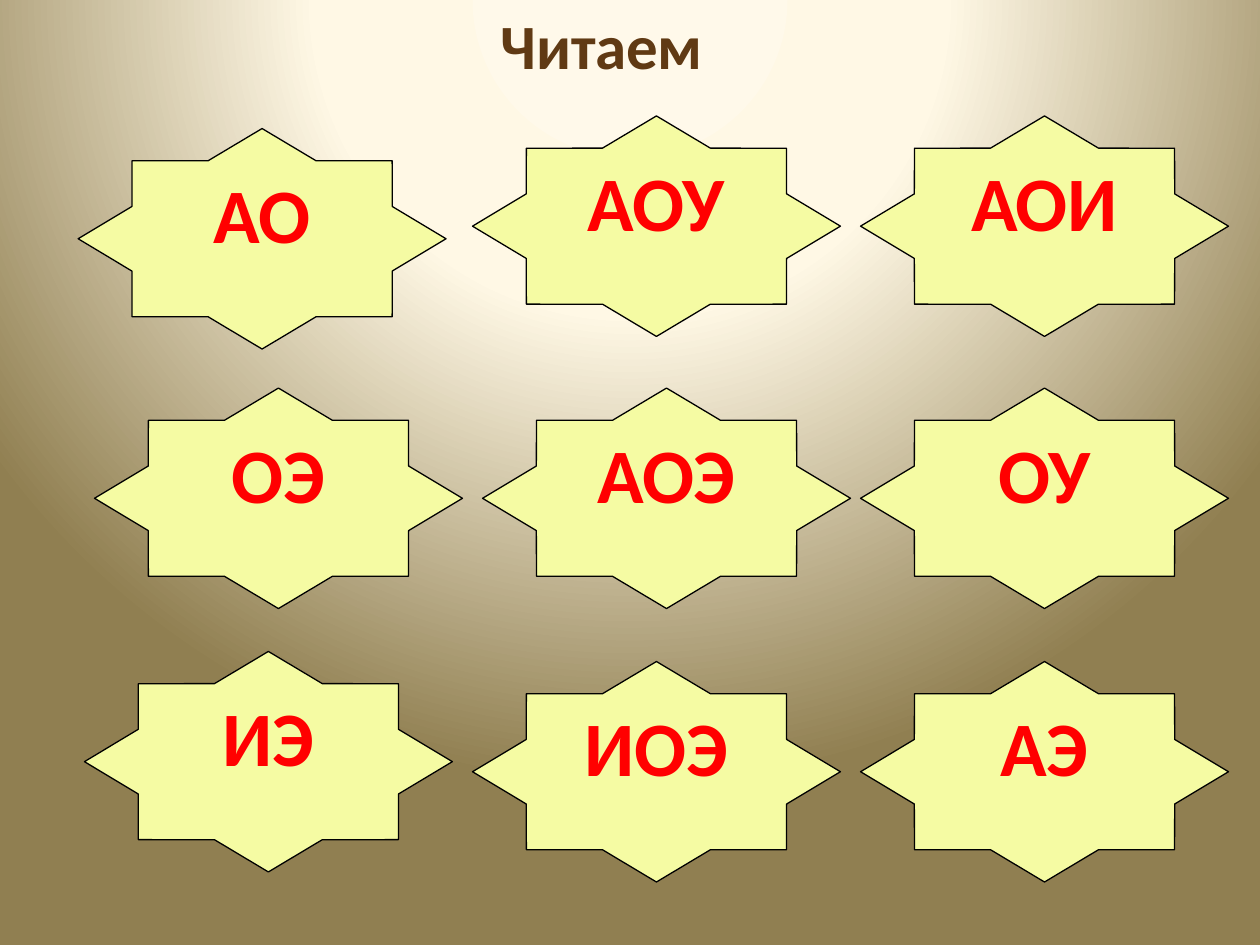
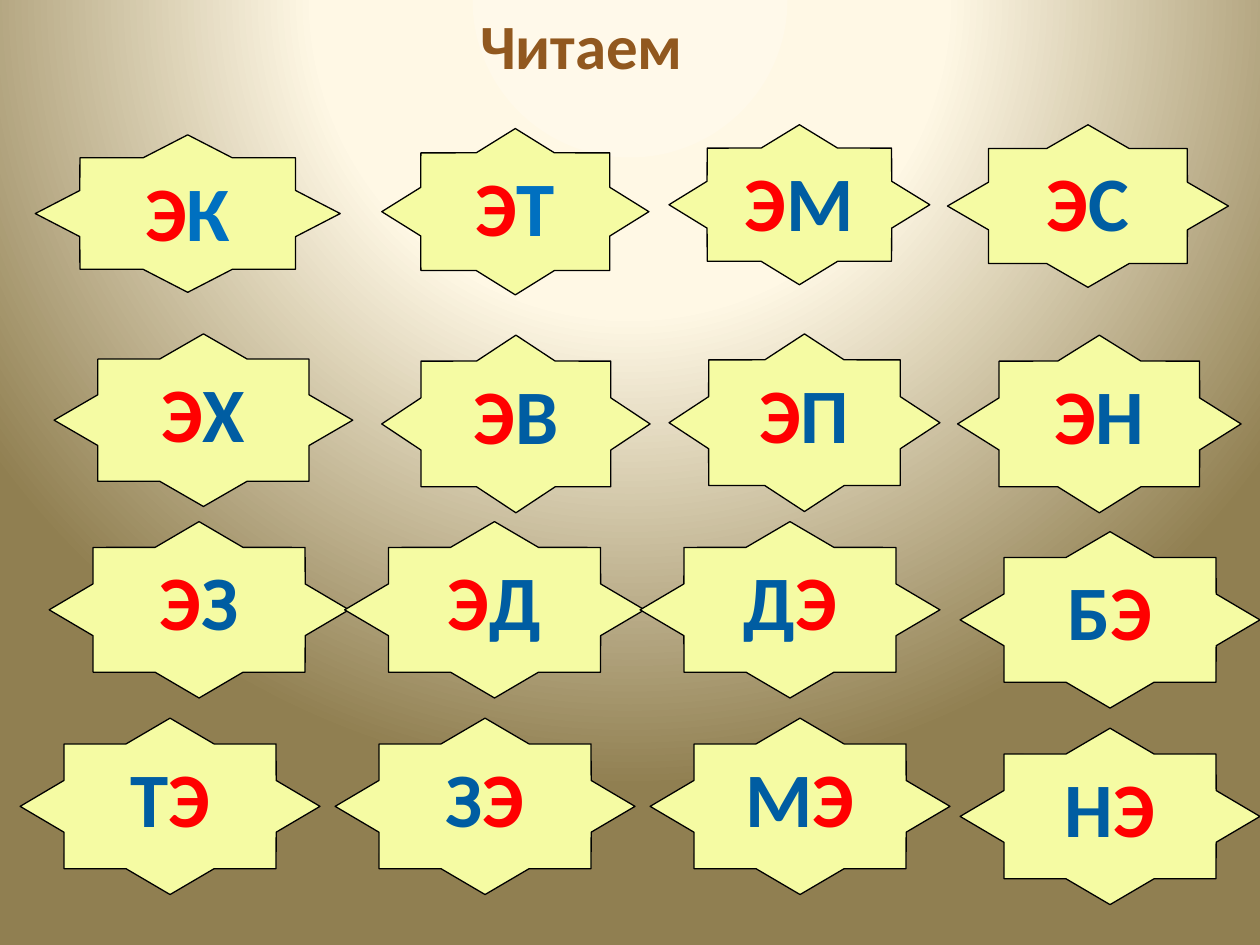
import dataclasses
import itertools
import typing

import pptx
import pptx.dml.color
import pptx.enum.shapes
import pptx.enum.text
import pptx.oxml
import pptx.oxml.ns
import pptx.util

WIDE, HIGH = pptx.util.Inches(10), pptx.util.Inches(7.5)
COLS, ROWS = 1000, 750
FONT = "Calibri"
VOWELS = "АОУИЭ"
POINT = 0.383
HUES = {
    "glow": "FFF9EA", "cream": "FFF8E5", "olive": "907F51",
    "star": "F5FBA3", "edge": "000000", "vowel": "FF0000",
    "blue": "005DA2", "sky": "0070C0",
    "dark": "603A14", "brown": "91581F",
}


@dataclasses.dataclass
class Star:
    """A word in a star, placed in grid columns and rows."""
    word: str
    left: float
    top: float
    wide: float
    high: float
    hue: str = "blue"


@dataclasses.dataclass
class Page:
    title_left: float
    title_hue: str
    body: str
    stars: list[Star]


def band(words: str, left: float, top: float, step: float, size: tuple[float, float],
         shifts: dict[str, tuple[float, float]]) -> list[Star]:
    """Space a row of stars evenly, then shift the named ones."""
    stars = []
    for col, word in enumerate(words.split()):
        right, down = shifts.get(word, (0, 0))
        stars.append(Star(word, left + col * step + right, top + down, *size))
    return stars


BIG, SMALL = (292, 175), (238, 140)
PAGES = [
    Page(311, "dark", "ОЭ", [
        *band("АО АОУ АОИ", 67, 92, 308, BIG, {"АО": (-5, 10)}),
        *band("ОЭ АОЭ ОУ", 67, 308, 308, BIG, {"ОЭ": (8, 0), "АОЭ": (8, 0)}),
        *band("ИЭ ИОЭ АЭ", 67, 525, 308, BIG, {"ИЭ": (0, -8)}),
    ]),
    Page(295, "brown", "ЭХ", [
        Star("ЭК", 28, 107, 242, 125, "sky"),
        Star("ЭТ", 303, 102, 212, 132, "sky"),
        Star("ЭМ", 531, 99, 207, 127),
        Star("ЭС", 752, 99, 223, 129),
        Star("ЭХ", 43, 265, 237, 137),
        Star("ЭВ", 303, 266, 213, 141),
        Star("ЭП", 531, 265, 215, 141),
        Star("ЭН", 760, 266, 225, 141),
        *band("ЭЗ ЭД ДЭ БЭ", 39, 414, 234.5, SMALL, {"БЭ": (19.5, 8)}),
        *band("ТЭ ЗЭ МЭ НЭ", 16, 570, 250, SMALL, {"НЭ": (-4, 8)}),
    ]),
]


def tint(name: str) -> pptx.dml.color.RGBColor:
    return pptx.dml.color.RGBColor.from_string(HUES[name])


def place(shape: typing.Any, left: float, top: float, wide: float, high: float) -> None:
    shape.left, shape.width = (round(WIDE * n / COLS) for n in (left, wide))
    shape.top, shape.height = (round(HIGH * n / ROWS) for n in (top, high))


def style(run: typing.Any, size: float, hue: str) -> None:
    font = run.font
    font.name, font.size, font.bold = FONT, pptx.util.Pt(size), True
    font.color.rgb = tint(hue)


def shade(master: typing.Any) -> None:
    """Give all slides a round glow centred above the top edge."""
    master.background.fill.gradient()
    grad = master.element.find(".//" + pptx.oxml.ns.qn("a:gradFill"))
    stops = "".join(
        f'<a:gs pos="{spot * 1000}"><a:srgbClr val="{HUES[hue]}"/></a:gs>'
        for spot, hue in ((0, "glow"), (40, "cream"), (100, "olive")))
    glow = pptx.oxml.parse_xml(
        f'<a:gradFill {pptx.oxml.ns.nsdecls("a")} rotWithShape="1"><a:gsLst>{stops}</a:gsLst>'
        '<a:path path="circle"><a:fillToRect l="50000" t="-80000" r="50000" b="180000"/>'
        '</a:path></a:gradFill>')
    grad.getparent().replace(grad, glow)


def outline(body: typing.Any) -> None:
    """Turn the body placeholder into a star."""
    body.element.spPr.find(pptx.oxml.ns.qn("a:xfrm")).addnext(pptx.oxml.parse_xml(
        f'<a:prstGeom {pptx.oxml.ns.nsdecls("a")} prst="star8"><a:avLst>'
        f'<a:gd name="adj" fmla="val {round(POINT * 100000)}"/></a:avLst></a:prstGeom>'))


def write(shape: typing.Any, star: Star) -> None:
    frame = shape.text_frame
    frame.word_wrap = True
    frame.auto_size = pptx.enum.text.MSO_AUTO_SIZE.NONE
    frame.vertical_anchor = pptx.enum.text.MSO_ANCHOR.TOP
    para = frame.paragraphs[0]
    para.alignment = pptx.enum.text.PP_ALIGN.CENTER
    para.space_before = pptx.util.Pt(0)
    props = para._p.get_or_add_pPr()
    props.set("marL", "0")
    props.set("indent", "0")
    props.append(pptx.oxml.parse_xml(f'<a:buNone {pptx.oxml.ns.nsdecls("a")}/>'))
    for vowel, part in itertools.groupby(star.word, lambda sign: sign in VOWELS):
        run = para.add_run()
        run.text = "".join(part)
        style(run, 44, "vowel" if vowel else star.hue)


def draw(slide: typing.Any, star: Star, body: bool) -> None:
    if body:
        shape = slide.placeholders[1]
    else:
        shape = slide.shapes.add_shape(
            pptx.enum.shapes.MSO_SHAPE.STAR_8_POINT, 0, 0, 0, 0)
        shape.adjustments[0] = POINT
    place(shape, star.left, star.top, star.wide, star.high)
    if body:
        outline(shape)
    shape.fill.solid()
    shape.fill.fore_color.rgb = tint("star")
    shape.line.color.rgb = tint("edge")
    shape.line.width = pptx.util.Pt(0.75)
    shape.shadow.inherit = False
    write(shape, star)


def build(deck: typing.Any, page: Page) -> None:
    slide = deck.slides.add_slide(deck.slide_layouts[1])
    title = slide.shapes.title
    place(title, page.title_left, 0, 333, 70)
    title.text_frame.text = "Читаем"
    title.text_frame.vertical_anchor = pptx.enum.text.MSO_ANCHOR.MIDDLE
    para = title.text_frame.paragraphs[0]
    para.alignment = pptx.enum.text.PP_ALIGN.CENTER
    style(para.runs[0], 36, page.title_hue)
    for star in page.stars:
        draw(slide, star, star.word == page.body)


def main() -> None:
    deck = pptx.Presentation()
    deck.slide_width, deck.slide_height = WIDE, HIGH
    shade(deck.slide_master)
    for page in PAGES:
        build(deck, page)
    deck.save("out.pptx")


if __name__ == "__main__":
    main()
